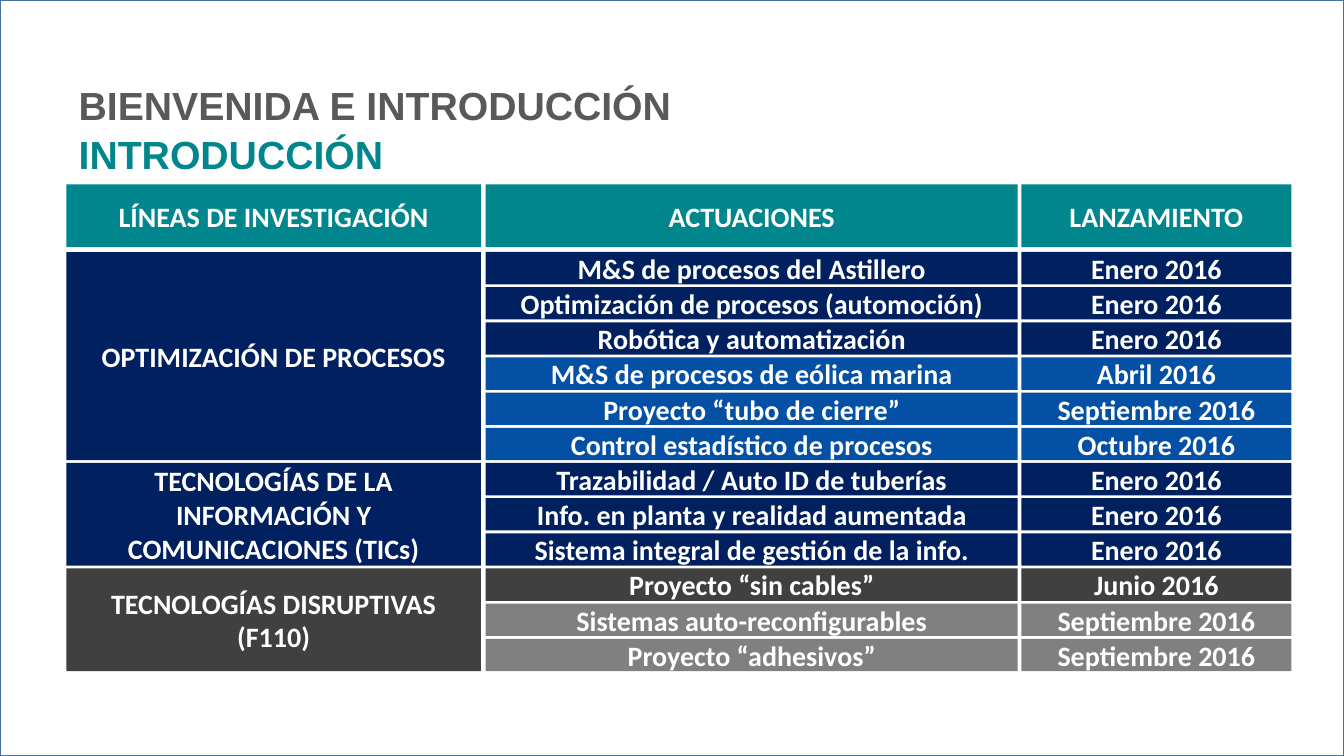
import pptx
import pptx.util
import pptx.dml.color
import pptx.enum.shapes
import pptx.enum.text
import lxml.etree

Pt = pptx.util.Pt
MSO_ANCHOR = pptx.enum.text.MSO_ANCHOR
PP_ALIGN = pptx.enum.text.PP_ALIGN
RECT = pptx.enum.shapes.MSO_SHAPE.RECTANGLE

COLORS = {"white": "FFFFFF", "frame": "43739E", "gray": "595959", "teal": "00868C",
          "navy": "002060", "blue": "0350A5", "dark": "404040", "mid": "808080"}

# Columns as (left, width)
COLUMNS = [(47.5, 296), (347, 380), (729.5, 193)]
HEADERS = ["LÍNEAS DE INVESTIGACIÓN", "ACTUACIONES", "LANZAMIENTO"]
HEADER_TOP, HEADER_H = 131.8, 44.8
ROWS_TOP, PITCH, GAP = 180, 25.12, 2

# Research lines as (name, color, actions)
LINES = [
    ("OPTIMIZACIÓN DE PROCESOS", "navy", [
        ("M&S de procesos del Astillero", "Enero 2016", "navy"),
        ("Optimización de procesos (automoción)", "Enero 2016", "navy"),
        ("Robótica y automatización", "Enero 2016", "navy"),
        ("M&S de procesos de eólica marina", "Abril 2016", "blue"),
        ("Proyecto “tubo de cierre”", "Septiembre 2016", "blue"),
        ("Control estadístico de procesos", "Octubre 2016", "blue")]),
    ("TECNOLOGÍAS DE LA INFORMACIÓN Y COMUNICACIONES (TICs)", "navy", [
        ("Trazabilidad / Auto ID de tuberías", "Enero 2016", "navy"),
        ("Info. en planta y realidad aumentada", "Enero 2016", "navy"),
        ("Sistema integral de gestión de la info.", "Enero 2016", "navy")]),
    ("TECNOLOGÍAS DISRUPTIVAS (F110)", "dark", [
        ("Proyecto “sin cables”", "Junio 2016", "dark"),
        ("Sistemas auto-reconfigurables", "Septiembre 2016", "mid"),
        ("Proyecto “adhesivos”", "Septiembre 2016", "mid")]),
]

prs = pptx.Presentation()
prs.slide_width, prs.slide_height = Pt(960), Pt(540)
s = prs.slides.add_slide(prs.slide_layouts[5])


def add_run(p, text, size, font, color):
    r = p.add_run()
    r.text = text
    r.font.size, r.font.name, r.font.bold = Pt(size), font, True
    r.font.color.rgb = pptx.dml.color.RGBColor.from_string(COLORS[color])


def add_box(left, top, width, height, color, text=""):
    sp = s.shapes.add_shape(RECT, Pt(left), Pt(top), Pt(width), Pt(height))
    sp.shadow.inherit = False
    sp.fill.solid()
    sp.fill.fore_color.rgb = pptx.dml.color.RGBColor.from_string(COLORS[color])
    sp.line.fill.background()
    if text:
        tf = sp.text_frame
        tf.word_wrap = True
        tf.vertical_anchor = MSO_ANCHOR.MIDDLE
        p = tf.paragraphs[0]
        p.alignment = PP_ALIGN.CENTER
        add_run(p, text, 20, "Calibri", color="white")
    return sp


# Slide frame, behind the title
frame = add_box(0, 0, 960, 540, "white")
frame.line.color.rgb = pptx.dml.color.RGBColor.from_string(COLORS["frame"])
frame.line.width = Pt(1)
alpha = lxml.etree.SubElement(frame.fill._xPr.find(".//" + pptx.oxml.ns.qn("a:srgbClr")),
                              pptx.oxml.ns.qn("a:alpha"))
alpha.set("val", "60000")
s.shapes._spTree.insert(2, frame._element)

# Title
title = s.shapes.title
title.left, title.top, title.width, title.height = Pt(49), Pt(55.4), Pt(853), Pt(75)
tf = title.text_frame
tf.word_wrap = True
tf.auto_size = pptx.enum.text.MSO_AUTO_SIZE.NONE
tf.vertical_anchor = MSO_ANCHOR.BOTTOM
for i, (text, color) in enumerate([("BIENVENIDA E INTRODUCCIÓN", "gray"),
                                   ("INTRODUCCIÓN", "teal")]):
    p = tf.add_paragraph() if i else tf.paragraphs[0]
    p.alignment = PP_ALIGN.LEFT
    p.line_spacing = 1.05
    add_run(p, text, 28, "Arial", color)

# Column headers
for (left, width), text in zip(COLUMNS, HEADERS):
    add_box(left, HEADER_TOP, width, HEADER_H, "teal", text)

# Research lines with their actions and launch dates
top = ROWS_TOP
for name, color, actions in LINES:
    left, width = COLUMNS[0]
    add_box(left, top, width, len(actions) * PITCH - GAP, color, name)
    for action, launch, row_color in actions:
        for (left, width), text in zip(COLUMNS[1:], (action, launch)):
            add_box(left, top, width, PITCH - GAP, row_color, text)
        top += PITCH

prs.save("out.pptx")
